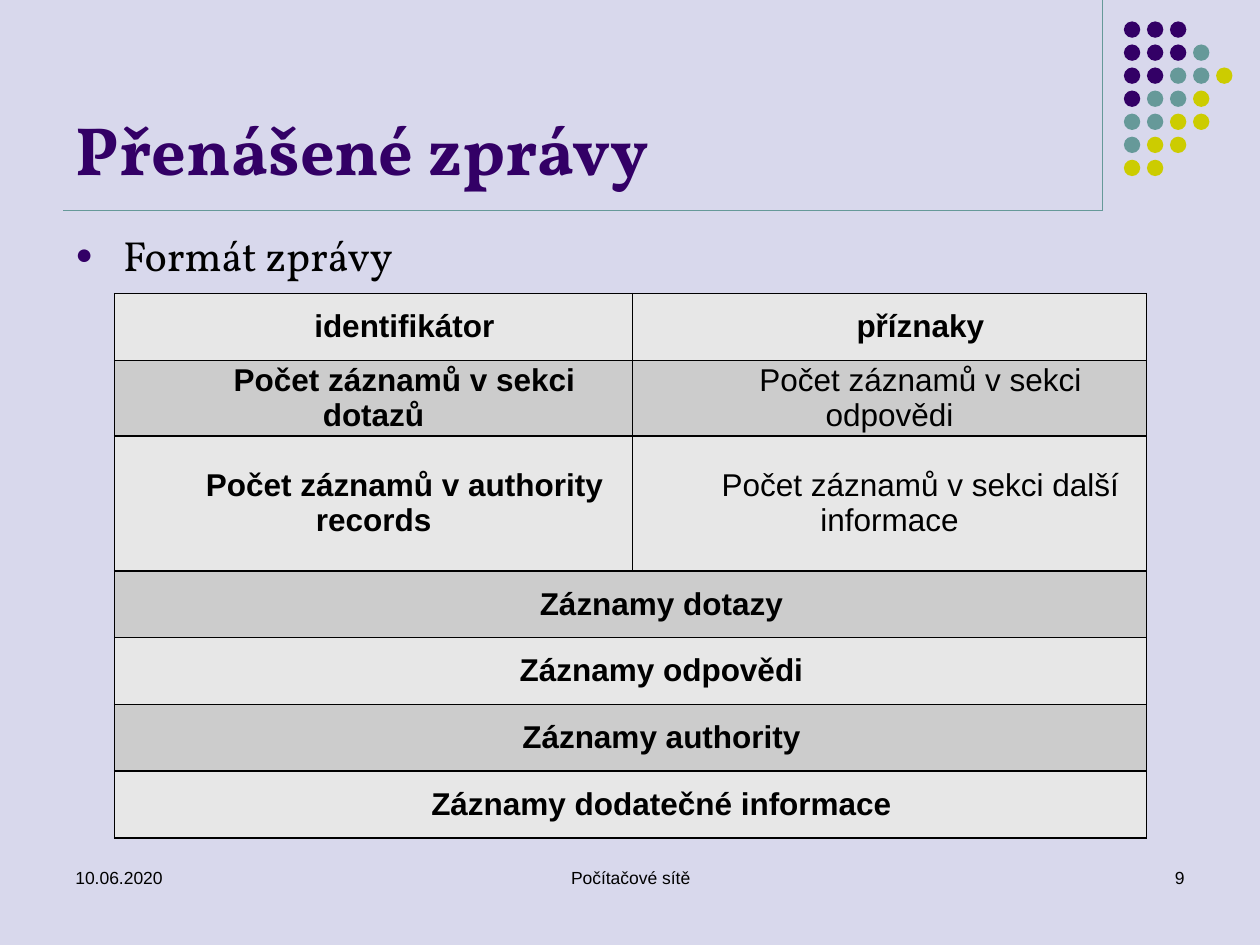
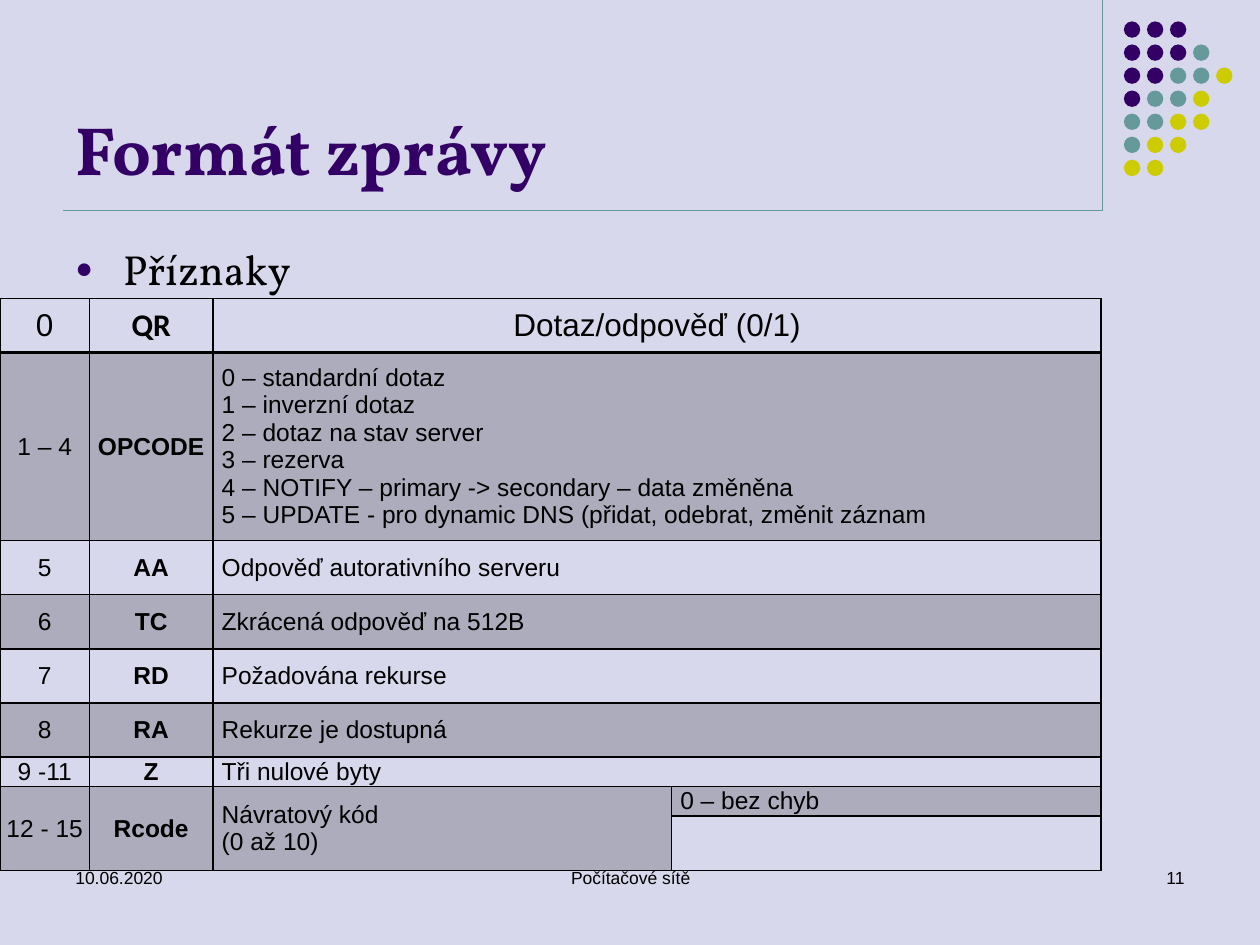
from lxml.etree import SubElement
from pptx import Presentation
from pptx.dml.color import RGBColor
from pptx.enum.shapes import MSO_CONNECTOR as CONN, MSO_SHAPE as SHAPE
from pptx.enum.text import MSO_ANCHOR as ANCHOR, PP_ALIGN as ALIGN
from pptx.oxml.ns import qn
from pptx.util import Inches, Pt

C = {"background": "D8D8EC", "purple": "330066", "teal": "669999", "yellow": "CCCC00",
     "black": "000000", "light": "E7E7E7", "dark": "CCCCCC"}
DOT_ROWS = ["PPP", "PPPT", "PPTTY", "PTTY", "TTYY", "TYY", "YY"]
DOT_COLORS = {"P": "purple", "T": "teal", "Y": "yellow"}
DOT_SIZE, DOT_STEP = 0.13, 0.183


def rgb(name):
    return RGBColor.from_string(C[name])


def write(tf, text, size=10, font="Arial", color="black", bold=False,
          align=ALIGN.LEFT, left=0, indent=0):
    """Put one paragraph into a text frame; line feeds become line breaks."""
    tf.word_wrap = True
    p = tf.paragraphs[0]
    p.text = text
    p.alignment = align
    pPr = p._p.get_or_add_pPr()
    pPr.set("marL", str(Inches(left)))
    pPr.set("indent", str(Inches(indent)))
    for r in p.runs:
        r.font.size, r.font.name, r.font.bold = Pt(size), font, bold
        r.font.color.rgb = rgb(color)
    for br in p._p.findall(qn("a:br")):
        SubElement(br, qn("a:rPr"), sz=str(size * 100))
    return pPr


message = {
    "title": "Přenášené zprávy", "topic": "Formát zprávy", "topic_top": 1.77, "page": "9",
    "at": (0.91, 2.33), "cols": [4.11, 4.08],
    "rows": [0.53, 0.53, 1.07, 0.53, 0.53, 0.53, 0.53],
    "merges": [(r, 0, r, 1) for r in range(3, 7)],
    "fills": ["light", "dark"], "alpha": None, "header_line": 1,
    "cells": [
        ["identifikátor", "příznaky"],
        ["Počet záznamů v sekci dotazů", "Počet záznamů v sekci odpovědi"],
        ["Počet záznamů v authority records", "Počet záznamů v sekci další informace"],
        ["Záznamy dotazy"],
        ["Záznamy odpovědi"],
        ["Záznamy authority"],
        ["Záznamy dodatečné informace"],
    ],
}
flags = {
    "title": "Formát zprávy", "topic": "Příznaky", "topic_top": 1.88, "page": "11",
    "at": (0, 2.37), "cols": [0.71, 0.98, 3.64, 3.41],
    "rows": [0.43, 1.49, 0.43, 0.43, 0.43, 0.43, 0.21, 0.21, 0.43],
    "merges": [(r, 2, r, 3) for r in range(7)] + [(7, c, 8, c) for c in range(3)],
    "fills": [None, "black"], "alpha": 20, "header_line": 2,
    "cells": [
        ["0", "QR", "Dotaz/odpověď (0/1)"],
        ["1 – 4", "OPCODE", "0 – standardní dotaz\n1 – inverzní dotaz\n2 – dotaz na stav server\n"
         "3 – rezerva\n4 – NOTIFY – primary -> secondary – data změněna\n"
         "5 – UPDATE - pro dynamic DNS (přidat, odebrat, změnit záznam"],
        ["5", "AA", "Odpověď autorativního serveru"],
        ["6", "TC", "Zkrácená odpověď na 512B"],
        ["7", "RD", "Požadována rekurse"],
        ["8", "RA", "Rekurze je dostupná"],
        ["9 -11", "Z", "Tři nulové byty"],
        ["12 - 15", "Rcode", "Návratový kód\n(0 až 10)", "0 – bez chyb"],
        [],
    ],
}

prs = Presentation()
prs.slide_width, prs.slide_height = Inches(10), Inches(7.5)

for page in (message, flags):
    s = prs.slides.add_slide(prs.slide_layouts[6])
    s.background.fill.solid()
    s.background.fill.fore_color.rgb = rgb("background")

    # Corner lines and dots
    for x, y in ((8.75, 0), (0.5, 1.67)):
        line = s.shapes.add_connector(CONN.STRAIGHT, Inches(x), Inches(y), Inches(8.75), Inches(1.67))
        line.line.color.rgb = rgb("teal")
        line.line.width = Pt(0.75)
        SubElement(line._element.spPr, qn("a:effectLst"))
    for i, dots in enumerate(DOT_ROWS):
        for j, dot in enumerate(dots):
            sp = s.shapes.add_shape(SHAPE.OVAL, Inches(8.92 + j * DOT_STEP), Inches(0.17 + i * DOT_STEP),
                                    Inches(DOT_SIZE), Inches(DOT_SIZE))
            sp.shadow.inherit = False
            sp.fill.solid()
            sp.fill.fore_color.rgb = rgb(DOT_COLORS[dot])
            sp.line.fill.background()

    # Title, topic and footer
    heading = dict(size=39, font="Vollkorn", color="purple", bold=True)
    topic = dict(size=24, font="Vollkorn", left=0.38, indent=-0.38)
    for text, box, style in (
        (page["title"], (0.5, 0.13, 8.25, 1.42), heading),
        (page["topic"], (0.5, page["topic_top"], 9, 0.55), topic),
        ("10.06.2020", (0.5, 6.83, 2.33, 0.5), {}),
        ("Počítačové sítě", (3.42, 6.83, 3.17, 0.5), dict(align=ALIGN.CENTER)),
        (page["page"], (7.17, 6.83, 2.33, 0.5), dict(align=ALIGN.RIGHT)),
    ):
        tf = s.shapes.add_textbox(*map(Inches, box)).text_frame
        pPr = write(tf, text, **style)
        if style is heading:
            tf.vertical_anchor = ANCHOR.BOTTOM
        if style is topic:
            SubElement(SubElement(pPr, qn("a:buClr")), qn("a:srgbClr"), val=C["purple"])
            SubElement(pPr, qn("a:buSzPct"), val="70000")
            SubElement(pPr, qn("a:buFont"), typeface="Arial")
            SubElement(pPr, qn("a:buChar"), char="●")

    # Table grid, borders and fills
    cols, rows = page["cols"], page["rows"]
    size = sum(cols), sum(rows)
    table = s.shapes.add_table(len(rows), len(cols), *map(Inches, page["at"] + size)).table
    for col, width in zip(table.columns, cols):
        col.width = Inches(width)
    for row, height in zip(table.rows, rows):
        row.height = Inches(height)
    for r in range(len(rows)):
        for c in range(len(cols)):
            cell = table.cell(r, c)
            cell.vertical_anchor = ANCHOR.MIDDLE
            cell.margin_top = cell.margin_bottom = 0
            cell.margin_left = cell.margin_right = Inches(0 if page is flags and c < 2 else 0.07)
            tcPr = cell._tc.get_or_add_tcPr()
            for side in "LRTB":
                under_header = (r, side) in ((0, "B"), (1, "T"))
                width = page["header_line"] if under_header else 1
                ln = SubElement(tcPr, qn("a:ln" + side), w=str(Pt(width)))
                SubElement(SubElement(ln, qn("a:solidFill")), qn("a:srgbClr"), val=C["black"])
            fill = page["fills"][r % 2]
            if fill is None:
                cell.fill.background()
                continue
            cell.fill.solid()
            cell.fill.fore_color.rgb = rgb(fill)
            if page["alpha"]:
                color = tcPr.find(qn("a:solidFill")).find(qn("a:srgbClr"))
                SubElement(color, qn("a:alpha"), val=str(page["alpha"] * 1000))
    for top, left, bottom, right in page["merges"]:
        table.cell(top, left).merge(table.cell(bottom, right))

    # Table text
    for r, texts in enumerate(page["cells"]):
        for c, text in enumerate(texts):
            if page is message:
                style = dict(size=18, bold=c == 0 or r == 0, align=ALIGN.CENTER, indent=0.49)
            else:
                style = dict(size=18 if r == 0 else 14, bold=c == 1,
                             font="Calibri" if text == "QR" else "Arial",
                             align=ALIGN.CENTER if r == 0 or c < 2 else ALIGN.LEFT)
            write(table.cell(r, c).text_frame, text, **style)

prs.save("out.pptx")
